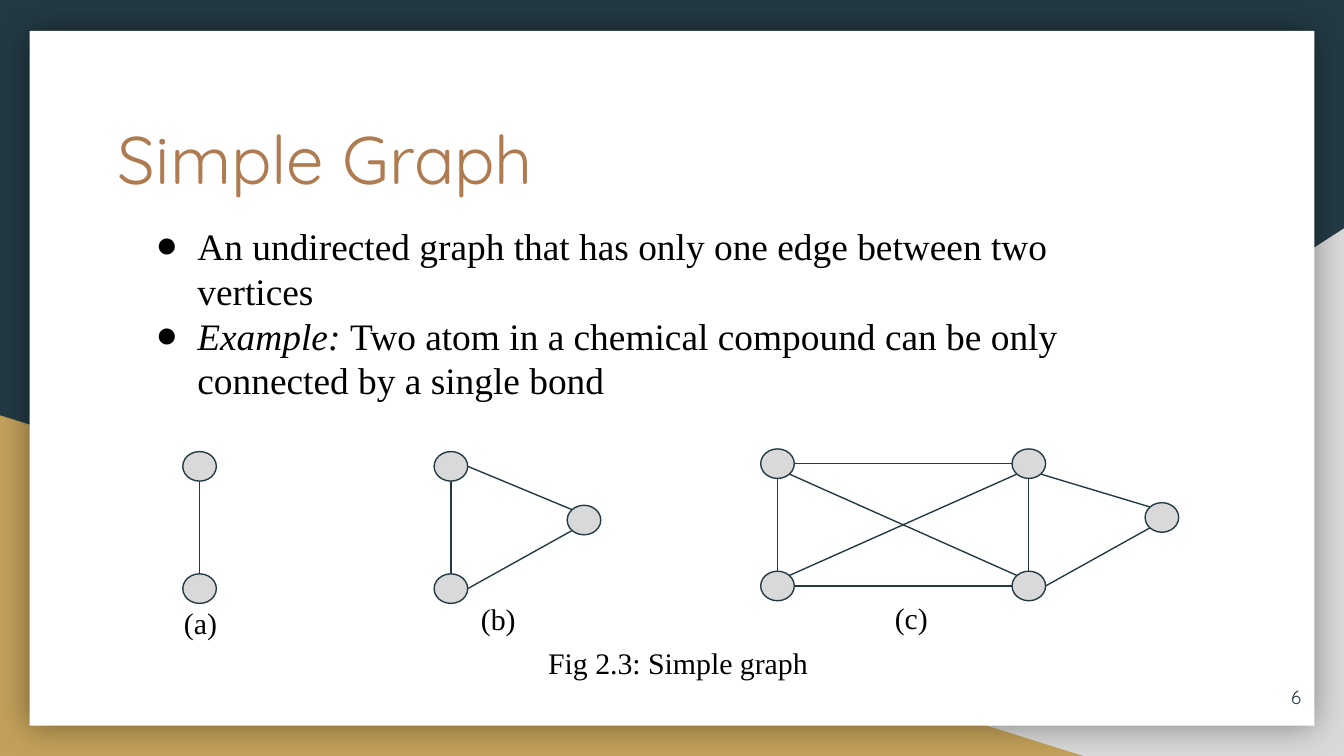
import dataclasses
import math

import pptx
import pptx.dml.color
import pptx.enum.shapes
import pptx.enum.text
import pptx.oxml
import pptx.oxml.ns
import pptx.util
from pptx.util import Inches

RGBColor = pptx.dml.color.RGBColor
MSO_SHAPE = pptx.enum.shapes.MSO_SHAPE
MSO_ANCHOR = pptx.enum.text.MSO_ANCHOR
MSO_AUTO_SIZE = pptx.enum.text.MSO_AUTO_SIZE
PP_ALIGN = pptx.enum.text.PP_ALIGN

NAVY = RGBColor(0x23, 0x3A, 0x44)
GREY = RGBColor(0xD9, 0xD9, 0xD9)
GOLD = RGBColor(0xC4, 0xA1, 0x5A)
BROWN = RGBColor(0xAF, 0x7B, 0x51)
WHITE = RGBColor(0xFF, 0xFF, 0xFF)
BLACK = RGBColor(0x00, 0x00, 0x00)
SANS = "Quicksand"
SERIF = "Times New Roman"

SLIDE_W = 10
SLIDE_H = SLIDE_W * 9 / 16
NODE_W, NODE_H = 0.25, 0.22
LINE_W = 0.75

# Points on the rim of a node, as fractions of its box
DIAG = (1 - math.sqrt(0.5)) / 2
RIM = {
    "top": (0.5, 0), "bottom": (0.5, 1), "left": (0, 0.5), "right": (1, 0.5),
    "tl": (DIAG, DIAG), "tr": (1 - DIAG, DIAG),
    "bl": (DIAG, 1 - DIAG), "br": (1 - DIAG, 1 - DIAG),
}

# Vertex offsets shared by the graphs: two rows, and a tip to the right
ROW, STEP, TIP = 0.91, 1.87, 0.99
TIP_Y = 0.4


@dataclasses.dataclass
class Edge:
    start: str
    start_rim: str
    end: str
    end_rim: str


@dataclasses.dataclass
class Graph:
    left: float
    top: float
    nodes: dict[str, tuple[float, float]]
    edges: list[Edge]
    label: str
    label_at: tuple[float, float, float]


GRAPHS = [
    Graph(5.66, 3.34,
          {"A": (0, 0), "B": (STEP, 0), "C": (0, ROW), "D": (STEP, ROW),
           "E": (STEP + TIP, TIP_Y)},
          [Edge("B", "left", "A", "right"),
           Edge("D", "left", "C", "right"),
           Edge("D", "tl", "A", "br"),
           Edge("C", "tr", "B", "bl"),
           Edge("C", "top", "A", "bottom"),
           Edge("D", "right", "E", "bl"),
           Edge("B", "br", "E", "tl"),
           Edge("D", "top", "B", "bottom")],
          "(c)", (6.56, 4.41, 0.45)),
    Graph(1.36, 3.36, {"A": (0, 0), "B": (0, ROW)},
          [Edge("B", "top", "A", "bottom")],
          "(a)", (1.27, 4.45, 0.45)),
    Graph(1.36 + STEP, 3.36, {"A": (0, 0), "B": (0, ROW), "C": (TIP, TIP_Y)},
          [Edge("B", "right", "C", "bl"),
           Edge("A", "right", "C", "tl"),
           Edge("B", "top", "A", "bottom")],
          "(b)", (3.48, 4.42, 0.46)),
]


def add_shape(s, kind, left: float, top: float, width: float, height: float,
              fill: RGBColor, line: RGBColor | None = None):
    sp = s.shapes.add_shape(kind, Inches(left), Inches(top), Inches(width), Inches(height))
    sp.shadow.inherit = False
    sp.fill.solid()
    sp.fill.fore_color.rgb = fill
    if line is None:
        sp.line.fill.background()
    else:
        sp.line.color.rgb = line
        sp.line.width = pptx.util.Pt(LINE_W)
    return sp


def style_run(r, font: str, size: float, color: RGBColor) -> None:
    r.font.name = font
    r.font.size = pptx.util.Pt(size)
    r.font.color.rgb = color


def add_text(s, text: str, left: float, top: float, width: float, height: float,
             font: str, size: float, color: RGBColor, inset: float = 0.1, wrap: bool = True):
    sp = s.shapes.add_textbox(Inches(left), Inches(top), Inches(width), Inches(height))
    tf = sp.text_frame
    tf.word_wrap = wrap
    tf.margin_left = tf.margin_right = Inches(0.1)
    tf.margin_top = tf.margin_bottom = Inches(inset)
    tf.text = text
    for p in tf.paragraphs:
        for r in p.runs:
            style_run(r, font, size, color)
    return tf


def add_bullet(p) -> None:
    pPr = p._p.get_or_add_pPr()
    pPr.set("marL", str(Inches(0.47)))
    pPr.set("indent", str(Inches(-0.31)))
    clr = pPr.makeelement(pptx.oxml.ns.qn("a:buClr"), {})
    clr.append(clr.makeelement(pptx.oxml.ns.qn("a:srgbClr"), {"val": str(BLACK)}))
    pPr.append(clr)
    pPr.append(pPr.makeelement(pptx.oxml.ns.qn("a:buFont"), {"typeface": SERIF}))
    pPr.append(pPr.makeelement(pptx.oxml.ns.qn("a:buChar"), {"char": "●"}))


def add_glow_shadow(sp) -> None:
    effects = sp._element.spPr.find(pptx.oxml.ns.qn("a:effectLst"))
    effects.append(pptx.oxml.parse_xml(
        f'<a:outerShdw {pptx.oxml.ns.nsdecls("a")} blurRad="{pptx.util.Pt(18)}" dist="0" dir="0"'
        ' algn="ctr" rotWithShape="0"><a:srgbClr val="000000"><a:alpha val="40000"/>'
        '</a:srgbClr></a:outerShdw>'))


def rim_point(graph: Graph, node: str, rim: str) -> tuple[int, int]:
    x, y = graph.nodes[node]
    fx, fy = RIM[rim]
    return Inches(graph.left + x + fx * NODE_W), Inches(graph.top + y + fy * NODE_H)


def draw_graph(s, graph: Graph) -> None:
    for x, y in graph.nodes.values():
        add_shape(s, MSO_SHAPE.OVAL, graph.left + x, graph.top + y, NODE_W, NODE_H, GREY, NAVY)
    for edge in graph.edges:
        cx = s.shapes.add_connector(
            pptx.enum.shapes.MSO_CONNECTOR.STRAIGHT,
            *rim_point(graph, edge.start, edge.start_rim),
            *rim_point(graph, edge.end, edge.end_rim))
        cx.line.color.rgb = NAVY
        cx.line.width = pptx.util.Pt(LINE_W)
        spPr = cx._element.spPr
        spPr.append(spPr.makeelement(pptx.oxml.ns.qn("a:effectLst"), {}))
    left, top, width = graph.label_at
    tf = add_text(s, graph.label, left, top, width, 0.37, SERIF, 16, BLACK, 0.05, False)
    tf.auto_size = MSO_AUTO_SIZE.SHAPE_TO_FIT_TEXT


def main() -> None:
    prs = pptx.Presentation()
    prs.slide_width, prs.slide_height = Inches(SLIDE_W), Inches(SLIDE_H)
    s = prs.slides.add_slide(prs.slide_layouts[6])

    # Background corners and white panel
    s.background.fill.solid()
    s.background.fill.fore_color.rgb = NAVY
    corner = add_shape(s, MSO_SHAPE.RIGHT_TRIANGLE, 3.92, 1.7, SLIDE_W - 3.92, SLIDE_H - 1.7, GREY)
    corner._element.spPr.xfrm.set("flipH", "1")
    add_shape(s, MSO_SHAPE.RIGHT_TRIANGLE, 0, 3.09, 8.06, SLIDE_H - 3.09, GOLD)
    add_glow_shadow(add_shape(s, MSO_SHAPE.RECTANGLE, 0.22, 0.23, 9.56, 5.17, WHITE))

    # Title and bullets
    add_text(s, "Simple Graph", 0.78, 0.77, 4.63, 0.69, SANS, 36, BROWN)
    tf = add_text(s, "An undirected graph that has only one edge between two vertices\nExample: ",
                  0.9, 1.56, 7.09, 1.56, SERIF, 20, BLACK)
    example = tf.paragraphs[1]
    example.runs[0].font.italic = True
    r = example.add_run()
    r.text = "Two atom in a chemical compound can be only connected by a single bond"
    style_run(r, SERIF, 20, BLACK)
    for p in tf.paragraphs:
        add_bullet(p)

    # Graphs with their labels
    for graph in GRAPHS:
        draw_graph(s, graph)

    # Figure caption and slide number
    add_text(s, "Fig 2.3: Simple graph", 3.98, 4.7, 2.58, 0.35, SERIF, 16, BLACK)
    tf = add_text(s, "6", 9.18, 4.97, 0.6, 0.43, SANS, 10, NAVY)
    tf.vertical_anchor = MSO_ANCHOR.MIDDLE
    tf.paragraphs[0].alignment = PP_ALIGN.RIGHT

    prs.save("out.pptx")


if __name__ == "__main__":
    main()
